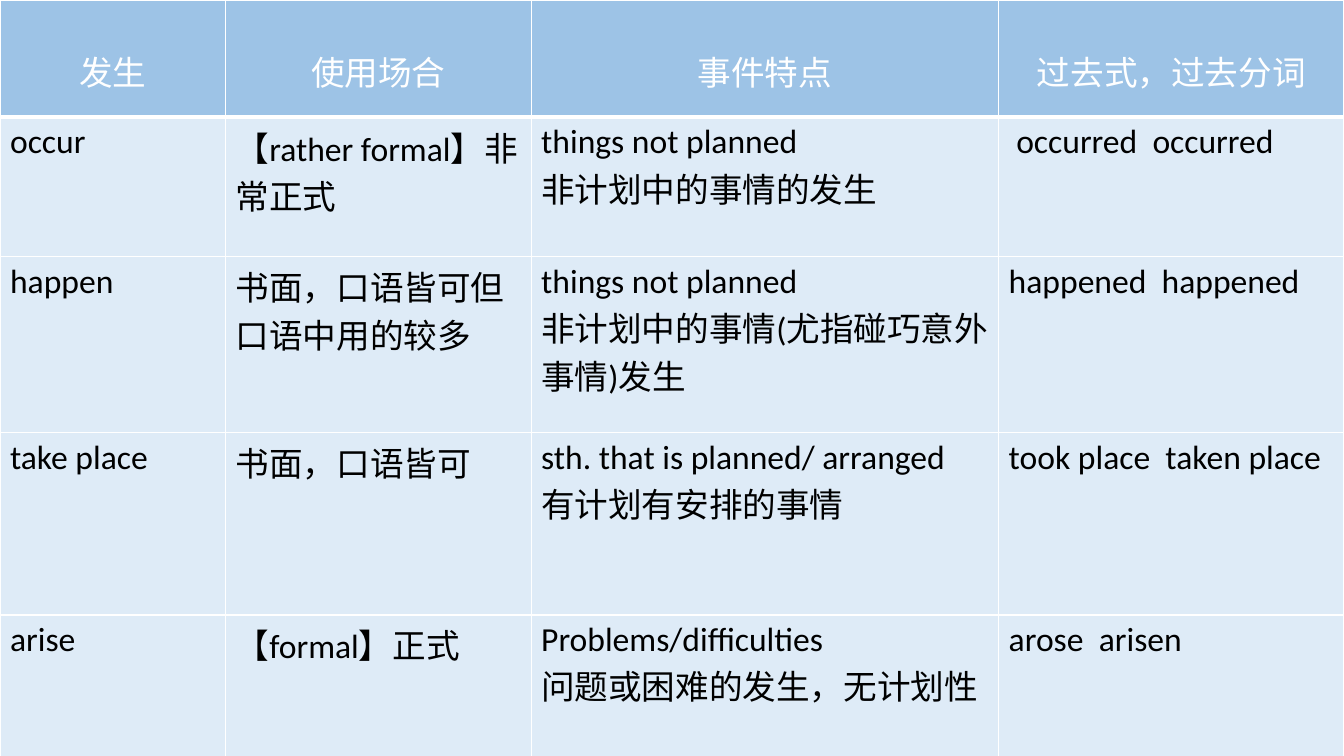
from lxml.etree import SubElement
from pptx import Presentation
from pptx.dml.color import RGBColor
from pptx.enum.text import PP_ALIGN
from pptx.oxml.ns import qn
from pptx.util import Pt

HEADINGS = ("发生", "使用场合", "事件特点", "过去式，过去分词")
VERBS = (
    ("occur", "【rather formal】非常正式",
     "things not planned\n非计划中的事情的发生", "occurred  occurred"),
    ("happen", "书面，口语皆可但口语中用的较多",
     "things not planned\n非计划中的事情(尤指碰巧意外事情)发生", "happened  happened"),
    ("take place", "书面，口语皆可",
     "sth. that is planned/ arranged\n有计划有安排的事情", "took place  taken place"),
    ("arise", "【formal】正式",
     "Problems/difficulties\n问题或困难的发生，无计划性", "arose  arisen"),
)
COLUMN_WIDTHS = (161.2, 218.2, 334, 246.6)
ROW_HEIGHTS = (83.6, 99.4, 126, 130.3, 105.3)
HEADING_TOP = 33
OCCURRED_INDENT = 12.6

WHITE = RGBColor(0xFF, 0xFF, 0xFF)
BLACK = RGBColor(0x00, 0x00, 0x00)
HEADING_BLUE = RGBColor(0x9D, 0xC3, 0xE6)
PALE_BLUE = RGBColor(0xDE, 0xEB, 0xF7)


def set_borders(cell, bottom_width):
    properties = cell._tc.get_or_add_tcPr()
    widths = {"a:lnL": 1, "a:lnR": 1, "a:lnT": 1, "a:lnB": bottom_width}
    for position, (side, width) in enumerate(widths.items()):
        line = SubElement(properties, qn(side), w=str(Pt(width)))
        fill = SubElement(line, qn("a:solidFill"))
        SubElement(fill, qn("a:srgbClr"), val=str(WHITE))
        properties.insert(position, line)


def fill_cell(cell, text, is_heading):
    cell.text = text
    cell.fill.solid()
    cell.fill.fore_color.rgb = HEADING_BLUE if is_heading else PALE_BLUE
    if is_heading:
        cell.margin_top = Pt(HEADING_TOP)
    for paragraph in cell.text_frame.paragraphs:
        paragraph.alignment = PP_ALIGN.CENTER if is_heading else PP_ALIGN.LEFT
        paragraph.font.size = Pt(24)
        paragraph.font.name = "Calibri"
        paragraph.font.color.rgb = WHITE if is_heading else BLACK
    set_borders(cell, 3 if is_heading else 1)


deck = Presentation()
deck.slide_width, deck.slide_height = Pt(960), Pt(540)
slide = deck.slides.add_slide(deck.slide_layouts[6])

rows = (HEADINGS, *VERBS)
verb_table = slide.shapes.add_table(
    len(rows), len(HEADINGS), 0, 0,
    Pt(sum(COLUMN_WIDTHS)), Pt(sum(ROW_HEIGHTS))).table
verb_table.first_row = False
verb_table.horz_banding = False
for column, width in zip(verb_table.columns, COLUMN_WIDTHS):
    column.width = Pt(width)
for row, height in zip(verb_table.rows, ROW_HEIGHTS):
    row.height = Pt(height)

for row_index, texts in enumerate(rows):
    for column_index, text in enumerate(texts):
        fill_cell(verb_table.cell(row_index, column_index), text, row_index == 0)
verb_table.cell(1, 3).margin_left = Pt(OCCURRED_INDENT)

deck.save("out.pptx")
